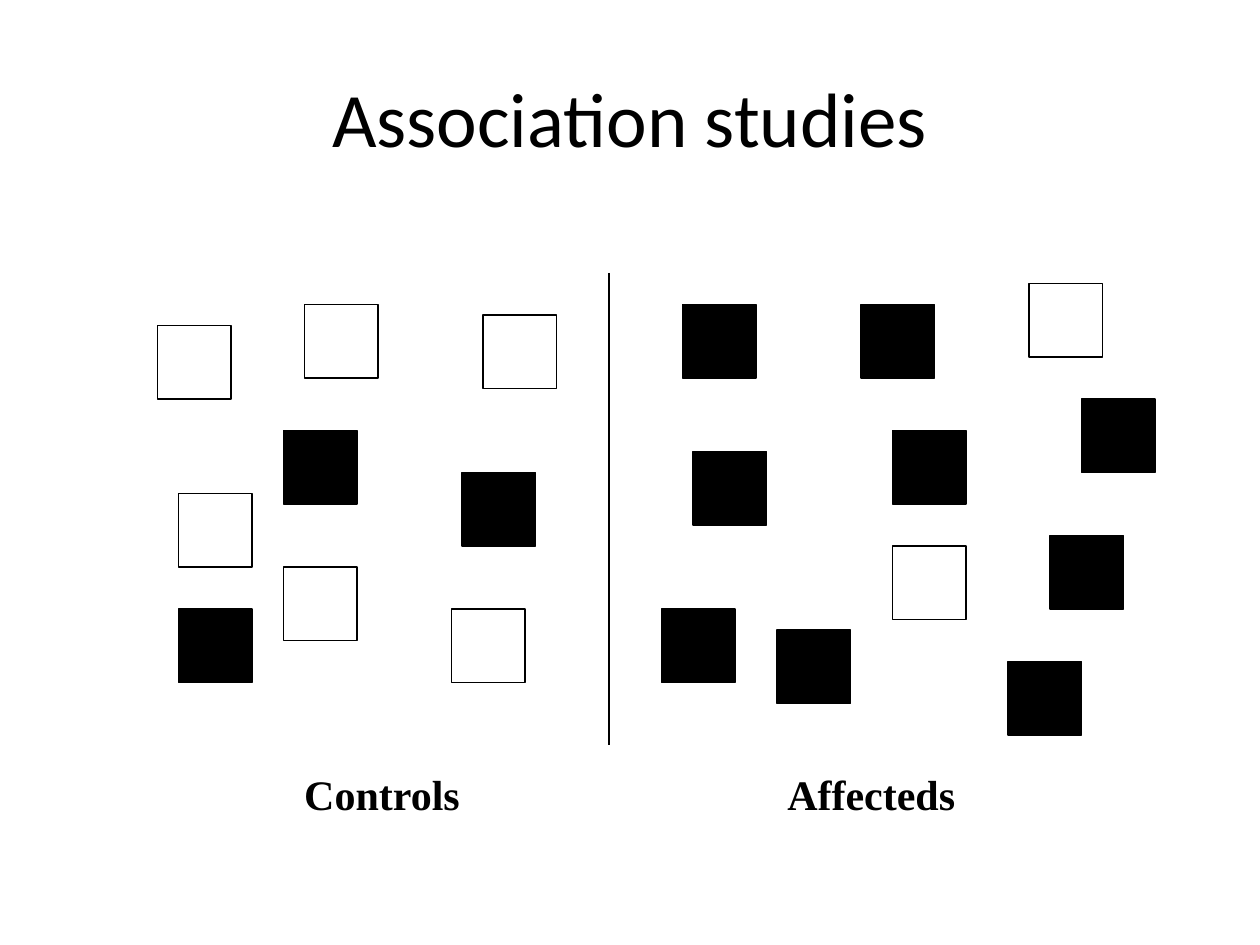
from pptx import Presentation
from pptx.dml.color import RGBColor
from pptx.enum.shapes import MSO_CONNECTOR as Connector, MSO_SHAPE as Shape
from pptx.enum.text import MSO_ANCHOR as Anchor, PP_ALIGN as Align
from pptx.oxml.ns import qn
from pptx.util import Inches, Pt
from lxml.etree import SubElement

COLORS = {"ink": "000000", "paper": "FFFFFF"}

# Grid of 120 columns by 90 rows, twelve cells to the inch
CELL = Inches(1) // 12
COLUMNS, ROWS = 120, 90
SIDE = 7

# Column and row of each person's square
UNMARKED = [(15, 31), (17, 47), (29, 29), (46, 30),
            (98, 27), (27, 54), (85, 52), (43, 58)]
MARKED = [(96, 63), (103, 38), (74, 60), (17, 58), (85, 41), (66, 43),
          (82, 29), (65, 29), (63, 58), (100, 51), (44, 45), (27, 41)]


def color(name):
    return RGBColor.from_string(COLORS[name])


def cells(*counts):
    return [round(count * CELL) for count in counts]


def add_text(page, text, area, font, size, bold=False, wrap=False, align=Align.LEFT):
    box = page.shapes.add_textbox(*cells(*area))
    frame = box.text_frame
    frame.text = text
    frame.word_wrap = wrap
    frame.vertical_anchor = Anchor.MIDDLE if wrap else Anchor.TOP
    para = frame.paragraphs[0]
    para.alignment = align
    span = para.runs[0]
    span.font.name = font
    span.font.size = Pt(size)
    span.font.bold = bold
    span.font.color.rgb = color("ink")


def add_square(page, column, row, fill):
    square = page.shapes.add_shape(Shape.RECTANGLE, *cells(column, row, SIDE, SIDE))
    square.shadow.inherit = False
    square.fill.solid()
    square.fill.fore_color.rgb = color(fill)
    square.line.color.rgb = color("ink")
    square.line.width = Pt(1)


def add_divider(page, column, top, bottom):
    divider = page.shapes.add_connector(
        Connector.STRAIGHT, *cells(column, top, column, bottom))
    divider.line.color.rgb = color("ink")
    divider.line.width = Pt(1)
    SubElement(divider.element.spPr, qn("a:effectLst"))


def main():
    deck = Presentation()
    deck.slide_width, deck.slide_height = cells(COLUMNS, ROWS)
    page = deck.slides.add_slide(deck.slide_layouts[6])

    # Title
    add_text(page, "Association studies", (6, 3.6, 108, 15), "Calibri", 44,
             wrap=True, align=Align.CENTER)

    # The two groups and the line between them
    add_divider(page, 58, 26, 71)
    for fill, places in (("paper", UNMARKED), ("ink", MARKED)):
        for column, row in places:
            add_square(page, column, row, fill)

    # Group names
    for name, column, width in (("Controls", 27.8, 17.3), ("Affecteds", 73.8, 18.4)):
        add_text(page, name, (column, 72.6, width, 6), "Times New Roman", 24, bold=True)

    deck.save("out.pptx")


if __name__ == "__main__":
    main()
